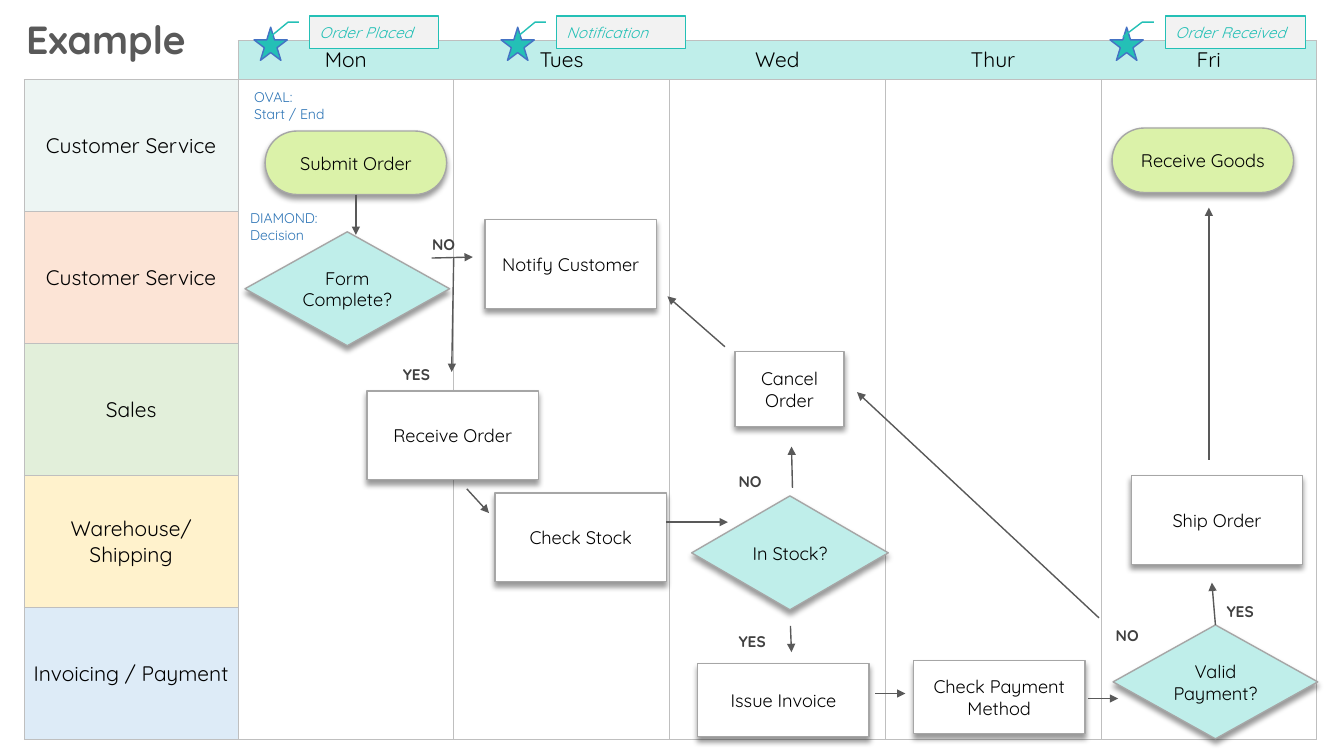
from lxml.etree import SubElement
from pptx import Presentation
from pptx.dml.color import RGBColor
from pptx.enum.shapes import MSO_CONNECTOR, MSO_SHAPE as Preset
from pptx.enum.text import MSO_ANCHOR as Anchor, MSO_AUTO_SIZE, PP_ALIGN as Align
from pptx.oxml.ns import qn
from pptx.util import Inches, Pt

FONT = "Quicksand"
BLACK = RGBColor(0, 0, 0)
WHITE = RGBColor(255, 255, 255)
DARK = RGBColor(0x40, 0x40, 0x40)
GREY = RGBColor(0x59, 0x59, 0x59)
EDGE = RGBColor(0xA6, 0xA6, 0xA6)
GRID = RGBColor(0xBF, 0xBF, 0xBF)
AQUA = RGBColor(0xBF, 0xEE, 0xEA)
TEAL = RGBColor(0x24, 0xC0, 0xB6)
LIME = RGBColor(0xDB, 0xF2, 0xA9)
BLUE = RGBColor(0x2E, 0x75, 0xB6)
STAR_EDGE = RGBColor(0x44, 0x72, 0xC4)
PALE = RGBColor(0xF2, 0xF2, 0xF2)

TITLE = "Example"
DAYS = ["Mon", "Tues", "Wed", "Thur", "Fri"]
LANES = [
    ("Customer Service", RGBColor(0xED, 0xF5, 0xF3)),
    ("Customer Service", RGBColor(0xFC, 0xE4, 0xD6)),
    ("Sales", RGBColor(0xE2, 0xEF, 0xDA)),
    ("Warehouse/\vShipping", RGBColor(0xFF, 0xF2, 0xCC)),
    ("Invoicing / Payment", RGBColor(0xDD, 0xEB, 0xF7)),
]
TABLE_LEFT, TABLE_TOP = 0.24, 0.15
COLUMN_WIDTHS = [2.12] + [2.14] * len(DAYS)
ROW_HEIGHTS = [0.25, 0.39] + [1.31] * len(LANES)

# kind: preset, fill
KINDS = {
    "oval": (Preset.ROUNDED_RECTANGLE, LIME),
    "decision": (Preset.FLOWCHART_DECISION, AQUA),
    "process": (Preset.FLOWCHART_PROCESS, WHITE),
}
# text, kind, left, top, width, height
STEPS = [
    ("Submit Order", "oval", 2.63, 1.3, 1.8, 0.63),
    ("Form Complete?", "decision", 2.43, 2.3, 2.03, 1.13),
    ("Notify Customer", "process", 4.81, 2.18, 1.7, 0.88),
    ("Receive Order", "process", 3.64, 3.88, 1.7, 0.88),
    ("Check Stock", "process", 4.91, 4.89, 1.7, 0.88),
    ("In Stock?", "decision", 6.86, 4.92, 1.95, 1.13),
    ("Cancel Order", "process", 7.29, 3.49, 1.08, 0.74),
    ("Issue Invoice", "process", 6.92, 6.58, 1.7, 0.73),
    ("Check Payment Method", "process", 9.06, 6.55, 1.7, 0.73),
    ("Valid Payment?", "decision", 11.04, 6.2, 2.03, 1.13),
    ("Ship Order", "process", 11.22, 4.72, 1.7, 0.88),
    ("Receive Goods", "oval", 11.03, 1.27, 1.8, 0.64),
]
# start, end, step and side where the arrow begins
ARROWS = [
    ((3.53, 1.93), (3.53, 2.33), ("Submit Order", 2)),
    ((4.28, 2.56), (4.69, 2.55), None),
    ((4.5, 2.56), (4.48, 3.69), None),
    ((4.63, 4.85), (4.85, 5.09), None),
    ((6.61, 5.18), (7.22, 5.18), None),
    ((7.86, 4.84), (7.85, 4.43), None),
    ((7.19, 3.44), (6.62, 2.94), None),
    ((7.84, 6.21), (7.85, 6.47), None),
    ((8.68, 6.88), (8.98, 6.88), None),
    ((10.79, 6.93), (11.09, 6.93), None),
    ((10.9, 6.13), (8.5, 3.89), None),
    ((12.05, 6.2), (12.02, 5.78), ("Valid Payment?", 0)),
    ((11.99, 4.56), (11.99, 2.06), None),
]
ANSWER_SIZE = (0.62, 0.24)
ANSWERS = [
    ("NO", 4.09, 2.3), ("YES", 3.82, 3.59), ("NO", 7.13, 4.66),
    ("YES", 7.15, 6.24), ("NO", 10.87, 6.18), ("YES", 11.99, 5.95),
]
HINTS = [
    ("OVAL:\nStart / End", 2.5, 0.82, 1.38, 0.45),
    ("DIAMOND:\nDecision", 2.46, 1.98, 0.92, 0.53),
]
# text, star left, callout width
MILESTONES = [
    ("Order Placed", 2.52, 1.28),
    ("Notification", 4.97, 1.28),
    ("Order Received", 11.01, 1.39),
]
STAR_TOP, STAR_SIZE = 0.27, 0.33
CALLOUT_TOP, CALLOUT_HEIGHT, CALLOUT_OFFSET = 0.16, 0.32, 0.55
CALLOUT_BENDS = [0.188, -0.083, 0.188, -0.167, 0.641, -0.304]


def write(frame, text, size, color, align=Align.CENTER, bold=False, italic=False):
    frame.text = text
    for para in frame.paragraphs:
        para.alignment = align
        for span in para.runs:
            font = span.font
            font.name, font.size, font.color.rgb = FONT, Pt(size), color
            font.bold, font.italic = bold, italic


def set_frame(frame, margin):
    frame.word_wrap = True
    frame.vertical_anchor = Anchor.MIDDLE
    frame.margin_left = frame.margin_right = Inches(margin)
    frame.margin_top = frame.margin_bottom = Inches(margin)


def add_preset(page, preset, box, fill, line):
    shape = page.shapes.add_shape(preset, *map(Inches, box))
    shape.shadow.inherit = False
    shape.fill.solid()
    shape.fill.fore_color.rgb = fill
    shape.line.color.rgb = line
    shape.line.width = Pt(1)
    return shape


def add_label(page, text, box, size, color, **style):
    label = page.shapes.add_textbox(*map(Inches, box))
    set_frame(label.text_frame, 0.02)
    write(label.text_frame, text, size, color, **style)


def cast_shadow(shape):
    effects = shape._element.spPr.find(qn("a:effectLst"))
    shadow = SubElement(effects, qn("a:outerShdw"), blurRad=str(Pt(4)), dist=str(Pt(3)),
                        dir="5400000", algn="t", rotWithShape="0")
    color = SubElement(shadow, qn("a:srgbClr"), val="000000")
    SubElement(color, qn("a:alpha"), val="40000")


def bordered_sides(row, column):
    """Sides of a table cell that carry a grid line, out of L, R, T and B."""
    last_row, last_column = len(LANES) + 1, len(DAYS)
    if row == 0:
        return "B" if column else ""
    if row == 1:
        if column == 0:
            return "RB"
        return "TB" + "L" * (column == 1) + "R" * (column == last_column)
    if column == 0:
        return "LRTB"
    return "LR" + "T" * (row == 2) + "B" * (row == last_row)


def format_cell(cell, row, column):
    text, fill = "", WHITE
    if row == 1 and column:
        text, fill = DAYS[column - 1], AQUA
    elif row > 1 and column == 0:
        text, fill = LANES[row - 2]
    cell.margin_left = cell.margin_right = cell.margin_top = cell.margin_bottom = 0
    cell.vertical_anchor = Anchor.MIDDLE
    if text:
        write(cell.text_frame, text, 15, BLACK)
    else:
        SubElement(cell.text_frame.paragraphs[0]._p, qn("a:endParaRPr"), sz="800")
    properties = cell._tc.get_or_add_tcPr()
    for side in "LRTB":
        line = SubElement(properties, qn("a:ln" + side), w=str(Pt(0.5)))
        if side in bordered_sides(row, column):
            paint = SubElement(line, qn("a:solidFill"))
            SubElement(paint, qn("a:srgbClr"), val=str(GRID))
        else:
            SubElement(line, qn("a:noFill"))
    if row < 2 and column == 0:
        cell.fill.background()
    else:
        cell.fill.solid()
        cell.fill.fore_color.rgb = fill


def add_lanes(page):
    box = (TABLE_LEFT, TABLE_TOP, sum(COLUMN_WIDTHS), sum(ROW_HEIGHTS))
    table = page.shapes.add_table(len(ROW_HEIGHTS), len(COLUMN_WIDTHS), *map(Inches, box)).table
    table.first_row = table.horz_banding = False
    for column, width in enumerate(COLUMN_WIDTHS):
        table.columns[column].width = Inches(width)
    for row, height in enumerate(ROW_HEIGHTS):
        table.rows[row].height = Inches(height)
        for column in range(len(COLUMN_WIDTHS)):
            format_cell(table.cell(row, column), row, column)


def add_step(page, text, kind, *box):
    preset, fill = KINDS[kind]
    step = add_preset(page, preset, box, fill, EDGE)
    cast_shadow(step)
    if kind == "oval":
        step.adjustments[0] = 0.5
    set_frame(step.text_frame, 0 if kind == "decision" else 0.02)
    write(step.text_frame, text, 13, BLACK)
    return step


def add_arrow(page, start, end, joint, steps):
    arrow = page.shapes.add_connector(MSO_CONNECTOR.STRAIGHT, *map(Inches, start + end))
    if joint:
        name, side = joint
        arrow.begin_connect(steps[name], side)
    arrow.line.color.rgb = GREY
    arrow.line.width = Pt(1)
    SubElement(arrow.line._get_or_add_ln(), qn("a:tailEnd"), type="triangle")
    SubElement(arrow._element.spPr, qn("a:effectLst"))


def add_milestone(page, text, left, width):
    add_preset(page, Preset.STAR_5_POINT, (left, STAR_TOP, STAR_SIZE, STAR_SIZE), TEAL, STAR_EDGE)
    box = (left + CALLOUT_OFFSET, CALLOUT_TOP, width, CALLOUT_HEIGHT)
    callout = add_preset(page, Preset.LINE_CALLOUT_2, box, PALE, TEAL)
    for index, bend in enumerate(CALLOUT_BENDS):
        callout.adjustments[index] = bend
    callout.text_frame.vertical_anchor = Anchor.MIDDLE
    write(callout.text_frame, text, 11, TEAL, align=Align.LEFT, italic=True)


def main():
    deck = Presentation()
    deck.slide_width, deck.slide_height = Inches(13.33), Inches(7.5)
    page = deck.slides.add_slide(deck.slide_layouts[5])
    title = page.shapes.title
    title.left, title.top, title.width, title.height = map(Inches, (0.16, 0.1, 1.93, 0.57))
    title.text_frame.auto_size = MSO_AUTO_SIZE.NONE
    title.text_frame.vertical_anchor = Anchor.MIDDLE
    write(title.text_frame, TITLE, 28, GREY, align=Align.LEFT, bold=True)

    add_lanes(page)
    steps = {step[0]: add_step(page, *step) for step in STEPS}
    for start, end, joint in ARROWS:
        add_arrow(page, start, end, joint, steps)
    for text, left, top in ANSWERS:
        add_label(page, text, (left, top, *ANSWER_SIZE), 11, DARK, bold=True)
    for text, *box in HINTS:
        add_label(page, text, box, 10, BLUE, align=Align.LEFT)
    for milestone in MILESTONES:
        add_milestone(page, *milestone)
    deck.save("out.pptx")


if __name__ == "__main__":
    main()
